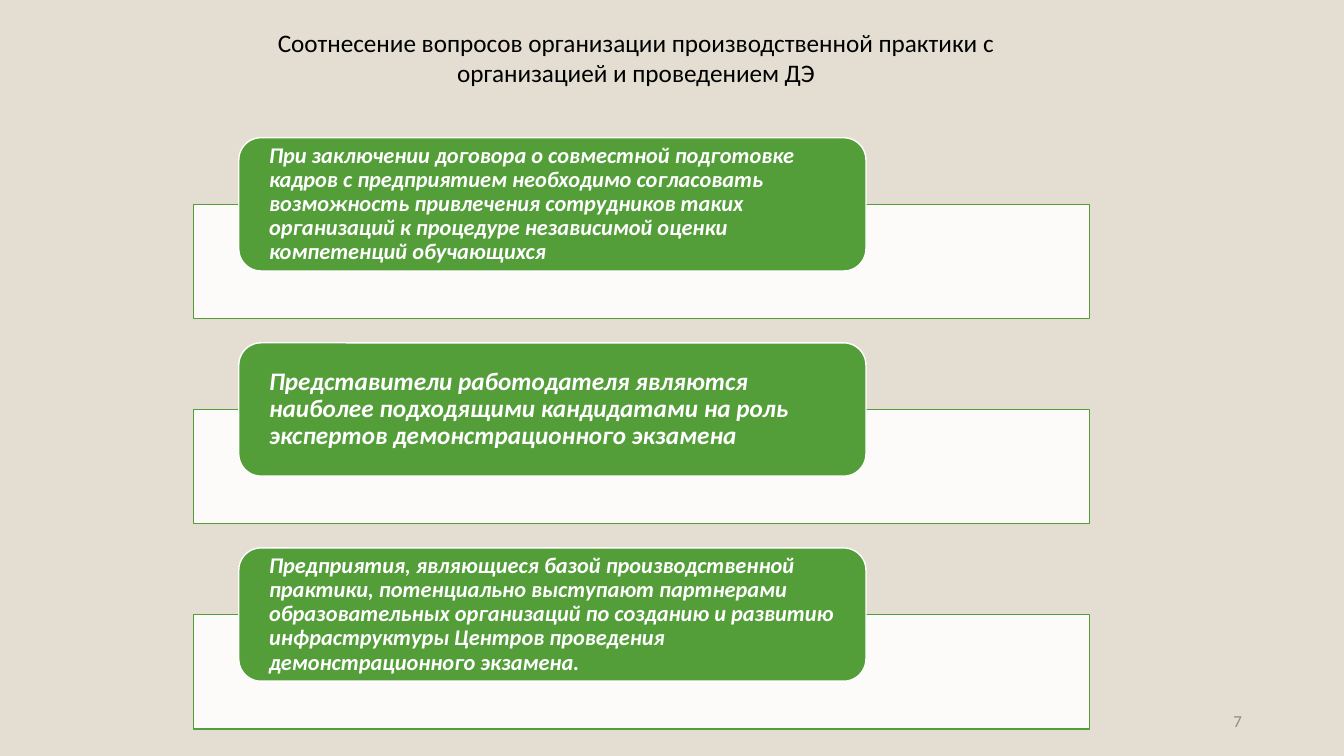
from lxml.etree import SubElement
from pptx import Presentation
from pptx.dml.color import RGBColor
from pptx.enum.shapes import MSO_SHAPE
from pptx.enum.text import MSO_ANCHOR, MSO_AUTO_SIZE, PP_ALIGN
from pptx.oxml.ns import qn
from pptx.util import Pt

TITLE = "Соотнесение вопросов организации производственной практики с организацией и проведением ДЭ"
PAGE = "7"
CARDS = [
    ("При заключении договора о совместной подготовке кадров с предприятием необходимо "
     "согласовать возможность привлечения сотрудников таких организаций к процедуре "
     "независимой оценки компетенций обучающихся", "body"),
    ("Представители работодателя являются наиболее подходящими кандидатами на роль "
     "экспертов демонстрационного экзамена", "large"),
    ("Предприятия, являющиеся базой производственной практики, потенциально выступают "
     "партнерами образовательных организаций по созданию и развитию инфраструктуры "
     "Центров проведения демонстрационного экзамена.", "body"),
]
THEME = {
    "font": "Calibri",
    "colors": {"back": "E3DED1", "green": "549E39", "white": "FFFFFF",
               "black": "000000", "grey": "8C8C8C"},
    "sizes": {"large": 18, "body": 16, "page": 12},
}

# Left, top, width, height in points
TITLE_BOX = (168.5, 15.8, 571.7, 51.1)
PAGE_BOX = (678.2, 500.4, 216, 28.8)
CARD = (170.6, 98.4, 448, 95.2)
BAR = (138.2, 146, 640, 81.6)
PITCH = 146.5
BAR_ALPHA = 90


def color(name):
    return RGBColor.from_string(THEME["colors"][name])


def pts(box, dy=0):
    x, y, w, h = box
    return Pt(x), Pt(y + dy), Pt(w), Pt(h)


def set_attrs(obj, **values):
    for name, value in values.items():
        setattr(obj, name, value)


def write(sp, text, size, ink, align, anchor, side=7.2, bold=False, italic=False, spacing=1.0):
    tf = sp.text_frame
    set_attrs(tf, text=text, word_wrap=True, auto_size=MSO_AUTO_SIZE.NONE,
              vertical_anchor=anchor, margin_left=Pt(side), margin_right=Pt(side))
    p = tf.paragraphs[0]
    set_attrs(p, alignment=align, line_spacing=spacing)
    font = p.runs[0].font
    set_attrs(font, name=THEME["font"], size=Pt(THEME["sizes"][size]), bold=bold, italic=italic)
    font.color.rgb = color(ink)


def add_panel(slide, kind, box, dy, fill, line):
    sp = slide.shapes.add_shape(kind, *pts(box, dy))
    sp.shadow.inherit = False
    sp.fill.solid()
    sp.fill.fore_color.rgb = color(fill)
    sp.line.color.rgb = color(line)
    sp.line.width = Pt(1)
    return sp


def set_alpha(sp, percent):
    rgb = sp.fill._xPr.find(qn("a:solidFill"))[0]
    SubElement(rgb, qn("a:alpha"), val=str(percent * 1000))


def main():
    prs = Presentation()
    set_attrs(prs, slide_width=Pt(960), slide_height=Pt(540))
    slide = prs.slides.add_slide(prs.slide_layouts[5])
    slide.background.fill.solid()
    slide.background.fill.fore_color.rgb = color("back")

    title = slide.shapes.title
    set_attrs(title, **dict(zip(("left", "top", "width", "height"), pts(TITLE_BOX))))
    write(title, TITLE, "large", "black", PP_ALIGN.CENTER, MSO_ANCHOR.TOP)

    for i, (text, size) in enumerate(CARDS):
        bar = add_panel(slide, MSO_SHAPE.RECTANGLE, BAR, i * PITCH, "white", "green")
        set_alpha(bar, BAR_ALPHA)
        card = add_panel(slide, MSO_SHAPE.ROUNDED_RECTANGLE, CARD, i * PITCH, "green", "white")
        set_attrs(card.text_frame, margin_top=0, margin_bottom=0)
        write(card, text, size, "white", PP_ALIGN.LEFT, MSO_ANCHOR.MIDDLE,
              side=17, bold=True, italic=True, spacing=0.9)

    page = slide.shapes.add_textbox(*pts(PAGE_BOX))
    write(page, PAGE, "page", "grey", PP_ALIGN.RIGHT, MSO_ANCHOR.MIDDLE)
    prs.save("out.pptx")


if __name__ == "__main__":
    main()
